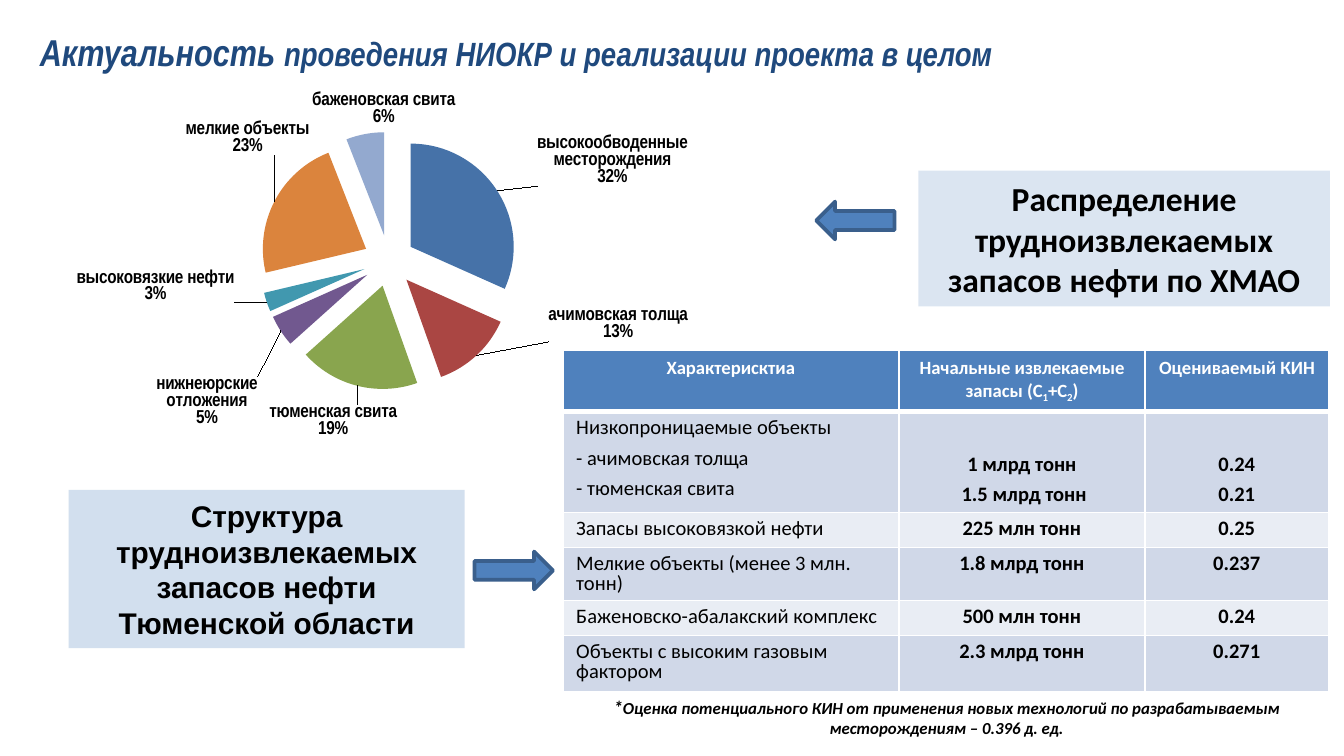
from lxml import etree
from pptx import Presentation
from pptx.chart.data import CategoryChartData
from pptx.dml.color import RGBColor
from pptx.enum.chart import XL_CHART_TYPE as CT
from pptx.enum.shapes import MSO_SHAPE as SH
from pptx.enum.text import MSO_ANCHOR as VA, PP_ALIGN as AL
from pptx.oxml import parse_xml
from pptx.oxml.ns import nsdecls, qn
from pptx.util import Pt

PX = 9525  # EMU in one px, 96 px to the inch


def px(*values):
    return [v * PX for v in values]


def rgb(color):
    return RGBColor.from_string(color)


def set_text(tf, paras, size=10, font="Calibri", color="000000", bold=False,
             italic=False, align=AL.LEFT, spacing=None, before=0):
    """Each paragraph is a string or a list of (text, overrides) runs."""
    for i, runs in enumerate(paras):
        p = tf.add_paragraph() if i else tf.paragraphs[0]
        p.alignment = align
        if spacing:
            p.line_spacing = spacing
        if i and before:
            p.space_before = Pt(before)
        for text, own in [(runs, {})] if isinstance(runs, str) else runs:
            r = p.add_run()
            r.text = text
            r.font.name, r.font.size = font, Pt(own.get("size", size))
            r.font.bold, r.font.italic = bold, italic
            r.font.color.rgb = rgb(color)
            if "base" in own:
                r._r.get_or_add_rPr().set("baseline", str(own["base"]))


class Deck:
    blue, edge, white = "4F81BD", "3A5F8C", "FFFFFF"
    bands = ("D0D8E8", "E9EDF4")

    def __init__(self, width, height):
        self.prs = Presentation()
        self.prs.slide_width, self.prs.slide_height = px(width, height)
        self.s = self.prs.slides.add_slide(self.prs.slide_layouts[6])

    def text(self, box, paras, **fmt):
        tf = self.s.shapes.add_textbox(*px(*box)).text_frame
        tf.word_wrap = True
        set_text(tf, paras, **fmt)

    def shape(self, kind, box):
        sp = self.s.shapes.add_shape(kind, *px(*box))
        sp.shadow.inherit = False
        sp.fill.solid()
        sp.fill.fore_color.rgb = rgb(self.blue)
        return sp

    def panel(self, box, text, opacity, **fmt):
        sp = self.shape(SH.RECTANGLE, box)
        sp.line.fill.background()
        clr = sp.fill._xPr.find(".//" + qn("a:srgbClr"))
        etree.SubElement(clr, qn("a:alpha")).set("val", str(opacity * 1000))
        sp.text_frame.word_wrap = True
        set_text(sp.text_frame, [text], bold=True, align=AL.CENTER, **fmt)

    def arrow(self, box, rotation=0):
        sp = self.shape(SH.RIGHT_ARROW, box)
        sp.rotation = rotation
        sp.line.color.rgb = rgb(self.edge)
        sp.line.width = Pt(2)

    def pie(self, box, slices, plot):
        data = CategoryChartData()
        data.categories = [name for name, *_ in slices]
        data.add_series("Series 1", [value for _, value, *_ in slices])
        chart = self.s.shapes.add_chart(CT.PIE, *px(*box), data).chart
        chart.has_legend = chart.has_title = False
        chart.font.name, chart.font.size = "Arial Narrow", Pt(10)
        chart.font.bold = True
        chart.font.color.rgb = rgb("000000")
        series = chart.plots[0].series[0]
        for i, (_, _, color, _) in enumerate(slices):
            fill = series.points[i].format.fill
            fill.solid()
            fill.fore_color.rgb = rgb(color)

        # Exploded slices and shifted labels with leader lines
        ns = nsdecls("c")
        ser = series._element
        ser.find(qn("c:dPt")).addprevious(parse_xml(f'<c:explosion {ns} val="25"/>'))
        shows = ('<c:dLblPos val="outEnd"/><c:showLegendKey val="0"/><c:showVal val="0"/>'
                 '<c:showCatName val="1"/><c:showSerName val="0"/><c:showPercent val="1"/>'
                 '<c:showBubbleSize val="0"/><c:separator>\n</c:separator>')
        labels = "".join(
            f'<c:dLbl><c:idx val="{i}"/><c:layout><c:manualLayout><c:x val="{x}"/>'
            f'<c:y val="{y}"/></c:manualLayout></c:layout>{shows}</c:dLbl>'
            for i, (*_, (x, y)) in enumerate(slices))
        ser.find(qn("c:cat")).addprevious(parse_xml(
            f'<c:dLbls {ns}>{labels}{shows}<c:showLeaderLines val="1"/></c:dLbls>'))

        # Inner plot area
        area = chart._chartSpace.find(".//" + qn("c:plotArea"))
        for old in area.findall(qn("c:layout")):
            area.remove(old)
        sizes = "".join(f'<c:{k} val="{v}"/>' for k, v in zip("xywh", plot))
        area.insert(0, parse_xml(
            f'<c:layout {ns}><c:manualLayout><c:layoutTarget val="inner"/>'
            f'<c:xMode val="edge"/><c:yMode val="edge"/>{sizes}</c:manualLayout></c:layout>'))

    def cell(self, cell, paras, fill, bottom=1, **fmt):
        cell.fill.solid()
        cell.fill.fore_color.rgb = rgb(fill)
        set_text(cell.text_frame, paras, **fmt)
        tc_pr = cell._tc.get_or_add_tcPr()
        for i, (side, width) in enumerate(zip("LRTB", (1, 1, 1, bottom))):
            tc_pr.insert(i, parse_xml(
                f'<a:ln{side} {nsdecls("a")} w="{Pt(width)}"><a:solidFill>'
                f'<a:srgbClr val="{self.white}"/></a:solidFill></a:ln{side}>'))

    def table(self, left, top, widths, heights, header, rows):
        box = px(left, top, sum(widths), sum(heights))
        t = self.s.shapes.add_table(len(heights), len(widths), *box).table
        for col, width in zip(t.columns, px(*widths)):
            col.width = width
        for row, height in zip(t.rows, px(*heights)):
            row.height = height
        for c, runs in enumerate(header):
            self.cell(t.cell(0, c), [runs], self.blue, bottom=3, color=self.white,
                      bold=True, align=AL.CENTER)
        for r, row in enumerate(rows, 1):
            for c, paras in enumerate(row):
                self.cell(t.cell(r, c), paras, self.bands[(r + 1) % 2], size=11,
                          bold=c > 0, align=AL.CENTER if c else AL.LEFT,
                          spacing=0.8, before=5.5)
                if len(paras) < len(row[0]):
                    t.cell(r, c).vertical_anchor = VA.BOTTOM


# Name, value, colour, label shift as a share of the chart
SLICES = [
    ("высокообводенные месторождения", 32, "4672A8", (0.04, 0)),
    ("ачимовская толща", 13, "AA4643", (0.08, -0.14)),
    ("тюменская свита", 19, "89A54E", (0.05, 0.03)),
    ("нижнеюрские отложения", 5, "71588F", (-0.02, 0.11)),
    ("высоковязкие нефти", 3, "4198AF", (-0.03, -0.09)),
    ("мелкие объекты", 23, "DB843D", (0.05, -0.11)),
    ("баженовская свита", 6, "93A9CF", (0.11, 0)),
]
SUB = {"base": -25000}
HEADER = [
    "Характерисктиа",
    [("Начальные извлекаемые запасы (С", {}), ("1", SUB), ("+С", {}), ("2", SUB), (")", {})],
    "Оцениваемый КИН",
]
ROWS = [
    (["Низкопроницаемые объекты", "- ачимовская толща", "- тюменская свита"],
     ["1 млрд тонн", " 1.5 млрд тонн"], ["0.24", "0.21"]),
    (["Запасы высоковязкой нефти"], ["225 млн тонн"], ["0.25"]),
    (["Мелкие объекты (менее 3 млн. тонн)"], ["1.8 млрд тонн"], ["0.237"]),
    (["Баженовско-абалакский комплекс"], ["500 млн тонн"], ["0.24"]),
    (["Объекты с высоким газовым фактором"], ["2.3 млрд тонн"], ["0.271"]),
]


def main():
    d = Deck(960, 540)

    # Pie of hard-to-recover reserves
    d.pie((19, 59, 595, 271), SLICES, (0.08, 0.13, 0.71, 0.68))
    d.panel((656, 122, 294, 97), "Распределение трудноизвлекаемых запасов нефти по ХМАО",
            20, size=18)
    d.arrow((583, 144, 56, 27), rotation=180)

    # Title
    d.text((19, 16, 717, 42),
           [[("Актуальность ", {"size": 20}),
             ("проведения НИОКР и реализации проекта в целом", {})]],
           size=18, font="Arial Narrow", color="1F497D", bold=True, italic=True)

    # Table of reserves
    d.table(402, 250, (240, 176, 131), (44, 72, 25, 38, 25, 40), HEADER, ROWS)
    d.panel((49, 350, 283, 113), "Структура трудноизвлекаемых запасов нефти Тюменской области",
            25, size=16, font="Arial")
    d.arrow((339, 394, 56, 27))

    # Footnote
    d.text((404, 492, 544, 40),
           [[("*", {"size": 10}),
             ("Оценка потенциального КИН от применения новых технологий по "
              "разрабатываемым месторождениям – 0.396 д. ед.", {})]],
           size=9, bold=True, italic=True, align=AL.CENTER)

    d.prs.save("out.pptx")


if __name__ == "__main__":
    main()
